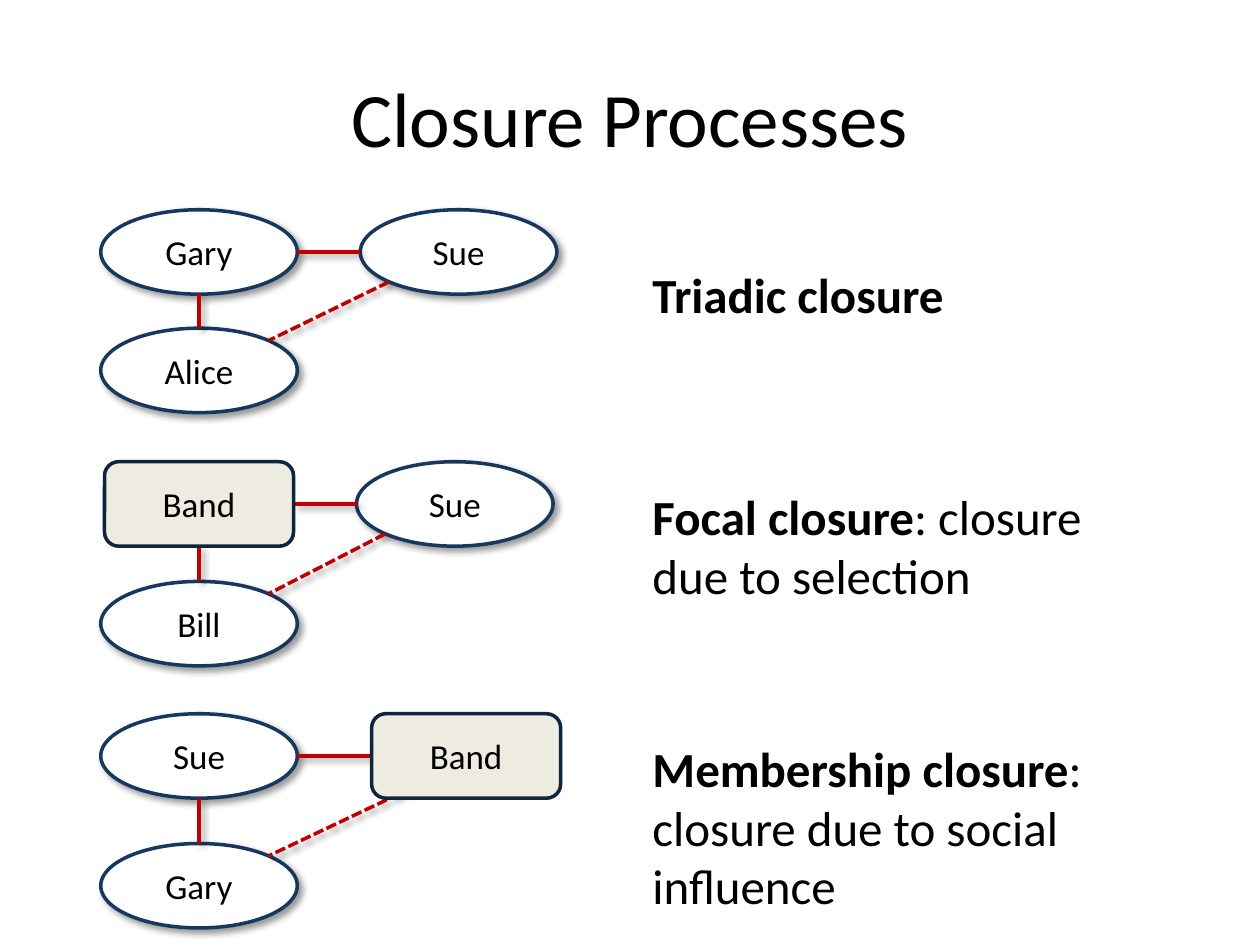
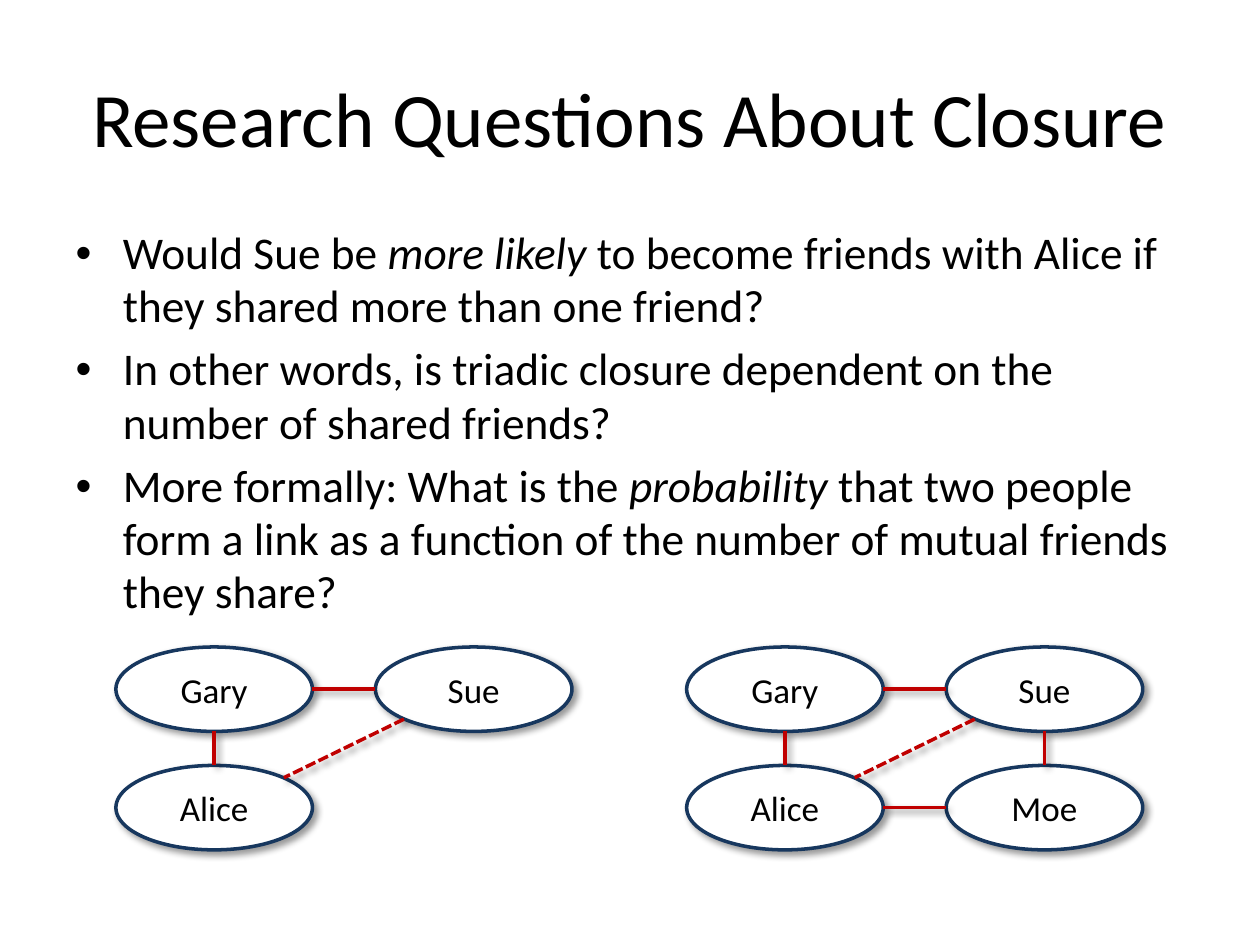
from dataclasses import dataclass

from lxml import etree
from pptx import Presentation
from pptx import util as u
from pptx.dml.color import RGBColor
from pptx.enum import dml, shapes, text
from pptx.oxml.ns import qn

BLACK = RGBColor(0x00, 0x00, 0x00)
WHITE = RGBColor(0xFF, 0xFF, 0xFF)
NAVY = RGBColor(0x17, 0x37, 0x5E)
DARK_NAVY = RGBColor(0x0F, 0x24, 0x3E)
CREAM = RGBColor(0xEE, 0xEC, 0xE1)
RED = RGBColor(0xC0, 0x00, 0x00)

COLUMNS, ROWS = 100, 75
TITLE_ONLY, TITLE_AND_BODY = 5, 1
NODE_HEIGHT = 6.7


@dataclass
class Kind:
    outline: int
    width: float
    fill: RGBColor
    edge: RGBColor
    shadowed: bool
    corner: tuple


PERSON = Kind(shapes.MSO_SHAPE.OVAL, 15.6, WHITE, NAVY, True, (0.71, 0.71))
FOCUS = Kind(shapes.MSO_SHAPE.ROUNDED_RECTANGLE, 15, CREAM, DARK_NAVY, False, (0.57, 0.75))


@dataclass
class Node:
    name: str
    x: float
    y: float

    @property
    def kind(self):
        return FOCUS if self.name == "Band" else PERSON

    def point(self, across, down):
        return self.x + across * self.kind.width / 2, self.y + down * NODE_HEIGHT / 2

    def corner(self, across, down):
        reach_x, reach_y = self.kind.corner
        return self.point(across * reach_x, down * reach_y)


class Deck:
    font = "Calibri"
    line_width = u.Pt(2)

    def __init__(self):
        self.presentation = Presentation()
        self.presentation.slide_width = u.Inches(10)
        self.presentation.slide_height = u.Inches(7.5)
        self.slide = None

    def grid(self, *lengths):
        column = self.presentation.slide_width / COLUMNS
        row = self.presentation.slide_height / ROWS
        return [round(n * (row if i % 2 else column)) for i, n in enumerate(lengths)]

    def place(self, shape, *box):
        shape.left, shape.top, shape.width, shape.height = self.grid(*box)

    def style(self, paragraph, size):
        paragraph.font.name = self.font
        paragraph.font.size = u.Pt(size)
        paragraph.font.color.rgb = BLACK

    def cast_shadow(self, shape):
        effects = etree.SubElement(shape._element.spPr, qn("a:effectLst"))
        shadow = etree.SubElement(
            effects, qn("a:outerShdw"), blurRad=str(u.Pt(4)), dist=str(u.Pt(3)),
            dir="2700000", algn="tl", rotWithShape="0")
        colour = etree.SubElement(shadow, qn("a:srgbClr"), val=str(BLACK))
        etree.SubElement(colour, qn("a:alpha"), val="40000")

    def add_slide(self, layout, title):
        self.slide = self.presentation.slides.add_slide(
            self.presentation.slide_layouts[layout])
        heading = self.slide.shapes.title
        self.place(heading, 5, 3, 90, 12.5)
        heading.text_frame.text = title
        heading.text_frame.vertical_anchor = text.MSO_ANCHOR.MIDDLE
        heading.text_frame.paragraphs[0].alignment = text.PP_ALIGN.CENTER
        self.style(heading.text_frame.paragraphs[0], 44)

    def bullets(self, box, questions):
        body = self.slide.placeholders[1]
        self.place(body, *box)
        frame = body.text_frame
        frame.auto_size = text.MSO_AUTO_SIZE.NONE
        for i, parts in enumerate(questions):
            paragraph = frame.add_paragraph() if i else frame.paragraphs[0]
            self.style(paragraph, 25.9)
            paragraph.space_before = u.Pt(5.5)
            paragraph.line_spacing = 0.98
            for j, words in enumerate(parts):
                run = paragraph.add_run()
                run.text = words
                if j % 2:
                    run.font.italic = True

    def definition(self, box, term, meaning):
        frame = self.slide.shapes.add_textbox(*self.grid(*box)).text_frame
        frame.word_wrap = True
        frame.auto_size = text.MSO_AUTO_SIZE.SHAPE_TO_FIT_TEXT
        paragraph = frame.paragraphs[0]
        self.style(paragraph, 28)
        term_run = paragraph.add_run()
        term_run.text = term
        term_run.font.bold = True
        if meaning:
            paragraph.add_run().text = meaning

    def node(self, group, node):
        kind = node.kind
        shape = group.shapes.add_shape(
            kind.outline, *self.grid(*node.point(-1, -1), kind.width, NODE_HEIGHT))
        shape.fill.solid()
        shape.fill.fore_color.rgb = kind.fill
        shape.line.color.rgb = kind.edge
        shape.line.width = self.line_width
        if kind.shadowed:
            self.cast_shadow(shape)
        else:
            shape.shadow.inherit = False
        frame = shape.text_frame
        frame.text = node.name
        frame.vertical_anchor = text.MSO_ANCHOR.MIDDLE
        frame.paragraphs[0].alignment = text.PP_ALIGN.CENTER
        self.style(frame.paragraphs[0], 20)

    def tie(self, group, start, end, forming=False):
        line = group.shapes.add_connector(
            shapes.MSO_CONNECTOR.STRAIGHT, *self.grid(*start, *end))
        line.line.color.rgb = RED
        line.line.width = self.line_width
        if forming:
            line.line.dash_style = dml.MSO_LINE.SQUARE_DOT
        self.cast_shadow(line)

    def closure(self, x, y, names, across=20.6, down=9.4):
        spots = [(x, y), (x + across, y), (x, y + down), (x + across, y + down)]
        nodes = [Node(name, *spot) for name, spot in zip(names, spots)]
        hub, beside, below, *second_hub = nodes
        group = self.slide.shapes.add_group_shape()
        for person in nodes:
            if person.kind is PERSON:
                self.node(group, person)
        self.tie(group, hub.point(1, 0), beside.point(-1, 0))
        self.tie(group, hub.point(0, 1), below.point(0, -1))
        self.tie(group, beside.corner(-1, 1), below.corner(1, -1), forming=True)
        for other in second_hub:
            self.tie(group, beside.point(0, 1), other.point(0, -1))
            self.tie(group, below.point(1, 0), other.point(-1, 0))
        for focus in nodes:
            if focus.kind is FOCUS:
                self.node(group, focus)


def main():
    deck = Deck()

    deck.add_slide(TITLE_ONLY, "Closure Processes")
    deck.closure(15.8, 20, ["Gary", "Sue", "Alice"])
    deck.closure(15.8, 40, ["Band", "Sue", "Bill"], 20.3, 9.5)
    deck.closure(15.8, 60, ["Sue", "Band", "Gary"], 21.2, 10.3)
    deck.definition((50.8, 20.5, 33.3, 5.7), "Triadic closure", "")
    deck.definition((50.8, 38.1, 37.5, 10.4), "Focal closure",
                    ": closure due to selection")
    deck.definition((50.8, 58.1, 37.5, 15.1), "Membership closure",
                    ": closure due to social influence")

    deck.add_slide(TITLE_AND_BODY, "Research Questions About Closure")
    deck.bullets((5, 17.5, 90, 30.8), [
        ["Would Sue be ", "more likely ",
         "to become friends with Alice if they shared more than one friend?"],
        ["In other words, is triadic closure dependent on the number of shared friends?"],
        ["More formally: What is the ", "probability",
         " that two people form a link as a function of the number of mutual "
         "friends they share?"],
    ])
    deck.closure(17, 54.7, ["Gary", "Sue", "Alice"])
    deck.closure(62.3, 54.7, ["Gary", "Sue", "Alice", "Moe"])

    deck.presentation.save("out.pptx")


if __name__ == "__main__":
    main()
